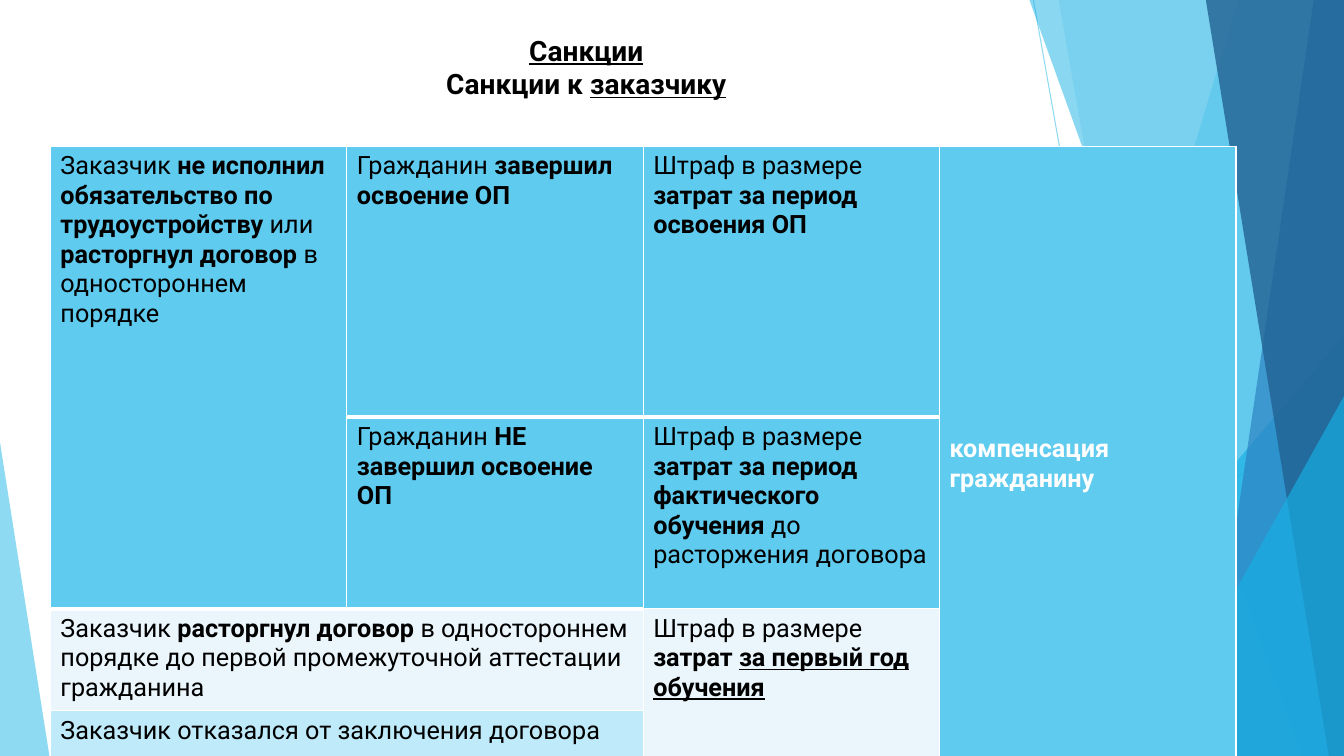
from lxml import etree
from pptx import Presentation
from pptx.dml.color import RGBColor
from pptx.enum.shapes import MSO_CONNECTOR, MSO_SHAPE
from pptx.enum.text import MSO_ANCHOR, PP_ALIGN
from pptx.oxml.ns import qn
from pptx.util import Inches, Pt

STRAIGHT = MSO_CONNECTOR.STRAIGHT
TRIANGLE = MSO_SHAPE.ISOSCELES_TRIANGLE
CENTER = PP_ALIGN.CENTER
MIDDLE = MSO_ANCHOR.MIDDLE

SKY = RGBColor(0x5F, 0xCB, 0xEF)
CYAN = RGBColor(0x17, 0xB0, 0xE4)
BLUE = RGBColor(0x2E, 0x83, 0xC3)
NAVY = RGBColor(0x22, 0x62, 0x92)
PALE = RGBColor(0xEA, 0xF6, 0xFC)
LIGHT = RGBColor(0xBF, 0xEA, 0xF9)
BLACK = RGBColor(0, 0, 0)
WHITE = RGBColor(0xFF, 0xFF, 0xFF)
FONT = "Roboto"

WIDTH, HEIGHT = 13.33, 7.5

# Spans are (text, style): b is bold, u is underlined.
TITLE = [
    [("Санкции", "bu")],
    [("Санкции к ", "b"), ("заказчику", "bu")],
]
# row, column, rows spanned, columns spanned, fill, text colour, spans
CELLS = [
    (0, 0, 2, 1, SKY, BLACK, [
        ("Заказчик ", ""), ("не исполнил обязательство по трудоустройству ", "b"),
        ("или ", ""), ("расторгнул договор ", "b"), ("в одностороннем порядке", "")]),
    (0, 1, 1, 1, SKY, BLACK, [("Гражданин ", ""), ("завершил освоение ОП", "b")]),
    (0, 2, 1, 1, SKY, BLACK, [
        ("Штраф в размере ", ""), ("затрат за период освоения ОП", "b")]),
    (0, 3, 4, 1, SKY, WHITE, [("компенсация гражданину", "b")]),
    (1, 1, 1, 1, SKY, BLACK, [("Гражданин ", ""), ("НЕ завершил освоение ОП", "b")]),
    (1, 2, 1, 1, SKY, BLACK, [
        ("Штраф в размере ", ""), ("затрат за период фактического обучения ", "b"),
        ("до расторжения договора", "")]),
    (2, 0, 1, 2, PALE, BLACK, [
        ("Заказчик ", ""), ("расторгнул договор ", "b"),
        ("в одностороннем порядке до первой промежуточной аттестации гражданина", "")]),
    (2, 2, 2, 1, PALE, BLACK, [
        ("Штраф в размере ", ""), ("затрат ", "b"), ("за первый год обучения", "bu")]),
    (3, 0, 1, 2, LIGHT, BLACK, [("Заказчик отказался от заключения договора", "")]),
]
ROW_HEIGHTS = [2.69, 1.89, 1.01, 0.44]
COLUMN_WIDTH, COLUMN_COUNT = 2.94, 4
THICK_BOTTOMS = {(0, 0), (0, 1), (0, 2), (1, 0), (1, 1)}

RAYS = [((10.25, 0), (11.58, HEIGHT)), ((WIDTH, 4.03), (8.12, HEIGHT))]
# Bands reach the right edge: x at the top, x at the bottom, colour, opacity.
# Triangles: left, top, width, height, apex position, colour, opacity.
BACKDROP = [
    (12.28, 10.04, SKY, 36),
    (10.5, 11.82, SKY, 20),
    (9.77, 3.33, 3.56, 4.17, 1, CYAN, 66),
    (10.21, 12.91, CYAN, 50),
    (13.03, 11.92, BLUE, 70),
    (11.96, 13.18, NAVY, 80),
    (11.34, 3.93, 1.99, 3.57, 1, CYAN, 66),
    (0, 4.39, 0.49, 3.11, 0, SKY, 70),
]


def set_opacity(properties, percent):
    color = next(properties.iter(qn("a:srgbClr")))
    etree.SubElement(color, qn("a:alpha"), val=str(percent * 1000))


def add_ray(page, start, end):
    ray = page.shapes.add_connector(STRAIGHT, *map(Inches, start + end))
    ray.line.color.rgb = SKY
    ray.line.width = Pt(0.75)
    properties = ray._element.spPr
    set_opacity(properties, 70)
    etree.SubElement(properties, qn("a:effectLst"))


def add_band(page, top_x, bottom_x):
    builder = page.shapes.build_freeform(Inches(top_x), 0)
    corners = [(WIDTH, 0), (WIDTH, HEIGHT), (bottom_x, HEIGHT)]
    builder.add_line_segments([(Inches(x), Inches(y)) for x, y in corners])
    return builder.convert_to_shape()


def add_triangle(page, left, top, width, height, apex):
    triangle = page.shapes.add_shape(TRIANGLE, *map(Inches, (left, top, width, height)))
    triangle.adjustments[0] = apex
    return triangle


def add_backdrop(page):
    for start, end in RAYS:
        add_ray(page, start, end)
    for *geometry, color, opacity in BACKDROP:
        draw = add_band if len(geometry) == 2 else add_triangle
        shape = draw(page, *geometry)
        shape.shadow.inherit = False
        shape.line.fill.background()
        shape.fill.solid()
        shape.fill.fore_color.rgb = color
        set_opacity(shape._element.spPr, opacity)


def write_spans(para, spans, size, color):
    for text, style in spans:
        span = para.add_run()
        span.text = text
        span.font.name = FONT
        span.font.size = Pt(size)
        span.font.color.rgb = color
        span.font.bold = "b" in style
        span.font.underline = "u" in style


def add_title(page):
    box = page.shapes.add_textbox(Inches(0.5), Inches(0.28), Inches(10.63), Inches(0.77))
    frame = box.text_frame
    frame.word_wrap = True
    for number, spans in enumerate(TITLE):
        para = frame.add_paragraph() if number else frame.paragraphs[0]
        para.alignment = CENTER
        write_spans(para, spans, 20, BLACK)


def set_borders(cell, top, bottom):
    """Draw white borders; the widths of the top and bottom are in points."""
    properties = cell._tc.get_or_add_tcPr()
    sides = [("lnL", 1), ("lnR", 1), ("lnT", top), ("lnB", bottom)]
    for position, (side, points) in enumerate(sides):
        line = etree.Element(qn(f"a:{side}"), w=str(Pt(points)))
        fill = etree.SubElement(line, qn("a:solidFill"))
        etree.SubElement(fill, qn("a:srgbClr"), val=str(WHITE))
        properties.insert(position, line)


def add_sanctions(page):
    row_count = len(ROW_HEIGHTS)
    table = page.shapes.add_table(
        row_count, COLUMN_COUNT, Inches(0.5), Inches(1.45),
        Inches(COLUMN_WIDTH * COLUMN_COUNT), Inches(sum(ROW_HEIGHTS))).table
    for row, height in zip(table.rows, ROW_HEIGHTS):
        row.height = Inches(height)
    for column in table.columns:
        column.width = Inches(COLUMN_WIDTH)
    for row, column, down, across, fill, color, spans in CELLS:
        cell = table.cell(row, column)
        if down * across > 1:
            cell.merge(table.cell(row + down - 1, column + across - 1))
        if down == row_count:
            cell.vertical_anchor = MIDDLE
        write_spans(cell.text_frame.paragraphs[0], spans, 18, color)
        for y in range(row, row + down):
            for x in range(column, column + across):
                part = table.cell(y, x)
                part.fill.solid()
                part.fill.fore_color.rgb = fill
                top = 3 if (y - 1, x) in THICK_BOTTOMS else 1
                bottom = 3 if (y, x) in THICK_BOTTOMS else 1
                set_borders(part, top, bottom)


def main():
    deck = Presentation()
    deck.slide_width, deck.slide_height = Inches(WIDTH), Inches(HEIGHT)
    page = deck.slides.add_slide(deck.slide_layouts[6])
    add_backdrop(page)
    add_title(page)
    add_sanctions(page)
    deck.save("out.pptx")


if __name__ == "__main__":
    main()
